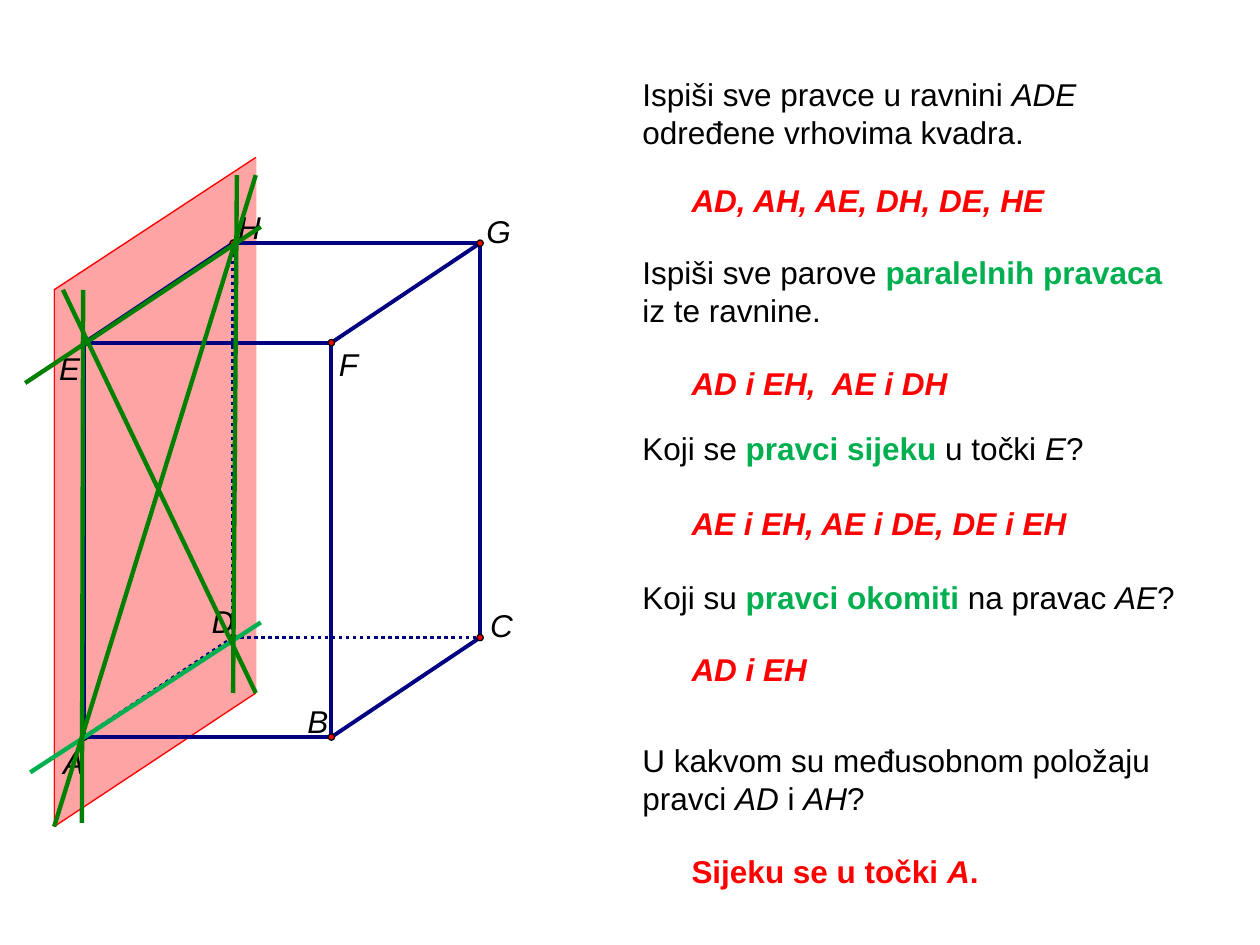
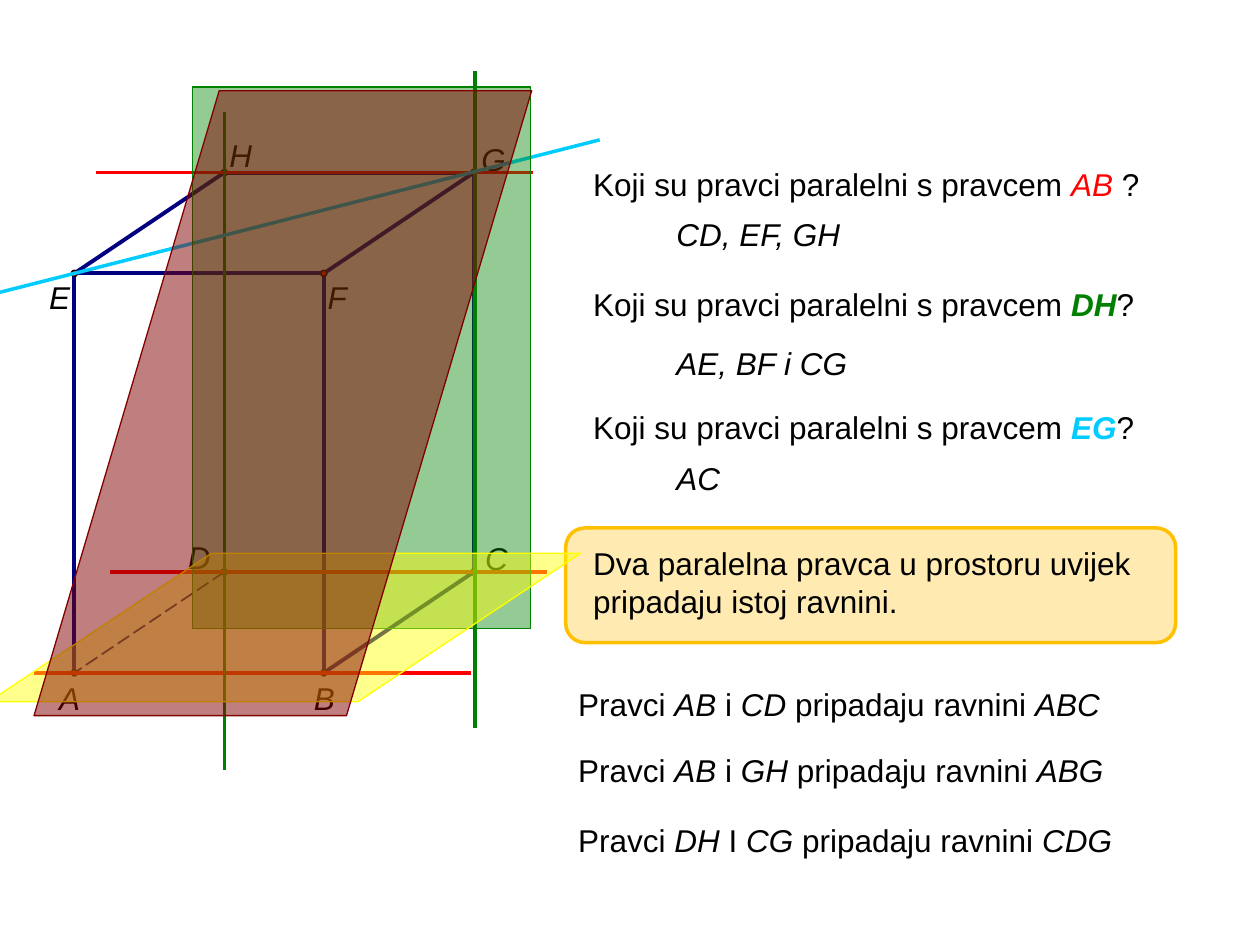
"""Builds two slides on lines and planes determined by the vertices of a cuboid."""
from dataclasses import dataclass

from lxml import etree
from pptx import Presentation
from pptx.dml.color import RGBColor
from pptx.enum.dml import MSO_LINE
from pptx.enum.shapes import MSO_CONNECTOR, MSO_SHAPE
from pptx.enum.text import MSO_AUTO_SIZE
from pptx.oxml.ns import qn
from pptx.util import Inches, Pt

STRAIGHT = MSO_CONNECTOR.STRAIGHT
OVAL, RECT, ROUNDED = MSO_SHAPE.OVAL, MSO_SHAPE.RECTANGLE, MSO_SHAPE.ROUNDED_RECTANGLE
FIT = MSO_AUTO_SIZE.SHAPE_TO_FIT_TEXT
DOTS, DASHES = MSO_LINE.ROUND_DOT, MSO_LINE.LONG_DASH
BLANK = 6


@dataclass(frozen=True)
class Theme:
    font: str = "Arial"
    size: float = 18
    text: str = "000000"
    red: str = "FF0000"
    green: str = "008000"
    accent: str = "00B050"
    cyan: str = "00CCFF"
    edge: str = "000080"
    pink: str = "FFA4A4"
    amber: str = "FFC000"
    leaf: str = "008200"
    yellow: str = "FFFF00"
    maroon: str = "800000"
    edge_width: float = 2.25
    dot: float = 0.05


class Deck:
    def __init__(self, theme):
        self.theme = theme
        self.prs = Presentation()
        self.prs.slide_width, self.prs.slide_height = Inches(10), Inches(7.5)
        self.shapes = None

    def slide(self):
        self.shapes = self.prs.slides.add_slide(self.prs.slide_layouts[BLANK]).shapes

    def paint(self, sp, fill, line, width=0, alpha=None):
        sp.shadow.inherit = False
        sp.fill.solid()
        sp.fill.fore_color.rgb = RGBColor.from_string(fill)
        sp.line.color.rgb = RGBColor.from_string(line)
        sp.line.width = Pt(width)
        if alpha is not None:
            clr = sp._element.spPr.find(qn("a:solidFill"))[0]
            etree.SubElement(clr, qn("a:alpha")).set("val", str(alpha * 1000))

    def shape(self, kind, x, y, w, h, fill, line, width=0, alpha=None):
        sp = self.shapes.add_shape(kind, Inches(x), Inches(y), Inches(w), Inches(h))
        self.paint(sp, fill, line, width, alpha)

    def plane(self, points, color, alpha=None):
        pts = [(Inches(x), Inches(y)) for x, y in points]
        builder = self.shapes.build_freeform(*pts[0])
        builder.add_line_segments(pts[1:], close=True)
        self.paint(builder.convert_to_shape(), color, color, alpha=alpha)

    def line(self, start, end, color, width, dash=None):
        ends = [Inches(v) for v in (*start, *end)]
        cx = self.shapes.add_connector(STRAIGHT, *ends)
        cx.line.color.rgb = RGBColor.from_string(color)
        cx.line.width = Pt(width)
        if dash is not None:
            cx.line.dash_style = dash
        etree.SubElement(cx._element.spPr, qn("a:effectLst"))

    def text(self, x, y, w, h, *runs, label=False):
        tf = self.shapes.add_textbox(Inches(x), Inches(y), Inches(w), Inches(h)).text_frame
        tf.word_wrap = not label
        tf.auto_size = FIT
        if label:
            tf.margin_left = tf.margin_right = tf.margin_top = tf.margin_bottom = 0
        p = tf.paragraphs[0]
        for content, style, color in runs:
            r = p.add_run()
            r.text = content
            r.font.name, r.font.size = self.theme.font, Pt(self.theme.size)
            r.font.bold, r.font.italic = "b" in style, "i" in style
            r.font.color.rgb = RGBColor.from_string(color)

    def cuboid(self, x, y, w, h, dx, dy, labels, dash, hidden_width):
        t = self.theme
        front = {"A": (x, y + h), "B": (x + w, y + h), "F": (x + w, y), "E": (x, y)}
        back = {k: (px + dx, py - dy) for k, (px, py) in zip("DCGH", front.values())}
        corners = {**front, **back}
        for a, b in ("AB", "EF", "FB", "CB", "GF", "GC", "HG", "EA", "HE"):
            self.line(corners[a], corners[b], t.edge, t.edge_width)
        for k in "CAH":
            self.line(corners["D"], corners[k], t.edge, hidden_width, dash)
        for k, (px, py) in corners.items():
            self.shape(OVAL, px - t.dot / 2, py - t.dot / 2, t.dot, t.dot, t.red, t.text)
            self.text(*labels[k], 0.18, 0.3, self.italic(k), label=True)

    def plain(self, content):
        return content, "", self.theme.text

    def italic(self, content):
        return content, "i", self.theme.text

    def mixed(self, *parts):
        return [(self.italic if i % 2 else self.plain)(s) for i, s in enumerate(parts)]


def plane_ade(deck):
    t = deck.theme
    deck.slide()
    plane = [(0.43, 6.56), (2.03, 5.5), (2.03, 1.25), (0.43, 2.3)]
    deck.plane(plane, t.pink)
    for start, end in zip(plane, plane[1:2] + plane[3:] + plane[3:]):
        pass
    for a, b in ((3, 0), (2, 3), (1, 0)):
        deck.line(plane[a], plane[b], t.red, 0.75)
    labels = {"A": (0.5, 5.9), "B": (2.44, 5.57), "C": (3.89, 4.81), "D": (1.68, 4.78),
              "E": (0.47, 2.77), "F": (2.69, 2.74), "G": (3.86, 1.68), "H": (1.89, 1.65)}
    deck.cuboid(0.67, 2.72, 1.96, 3.13, 1.18, 0.79, labels, DOTS, 0)

    questions = [
        (0.55, 4.73, 0.7, deck.mixed("Ispiši sve pravce u ravnini ", "ADE ",
                                     "određene vrhovima kvadra.")),
        (1.96, 4.33, 0.7, [deck.plain("Ispiši sve parove "),
                           ("paralelnih pravaca ", "b", t.accent),
                           deck.plain("iz te ravnine.")]),
        (3.36, 4.73, 0.4, [deck.plain("Koji se "), ("pravci sijeku ", "b", t.accent),
                           *deck.mixed("u točki ", "E", "?")]),
        (4.54, 4.73, 0.4, [deck.plain("Koji su "), ("pravci okomiti ", "b", t.accent),
                           *deck.mixed("na pravac ", "AE", "?")]),
        (5.83, 4.33, 0.7, deck.mixed("U kakvom su međusobnom položaju pravci ", "AD",
                                     " i ", "AH", "?")),
    ]
    for y, w, h, runs in questions:
        deck.text(5, y, w, h, *runs)
    answers = [
        (1.39, [("AD, AH, AE, DH, DE, HE", "bi")]),
        (2.84, [("AD i EH,  AE i DH", "bi")]),
        (3.95, [("AE i EH, AE i DE, DE i EH", "bi")]),
        (5.11, [("AD i EH", "bi")]),
        (6.71, [("Sijeku se u točki ", "b"), ("A", "bi"), (".", "b")]),
    ]
    for y, runs in answers:
        deck.text(5.39, y, 3.94, 0.4, *[(s, style, t.red) for s, style in runs])

    deck.line((0.24, 6.13), (2.07, 4.94), t.accent, 2.5)
    for start, end in (((0.43, 6.56), (2.03, 1.39)), ((0.65, 6.53), (0.66, 2.3)),
                       ((1.85, 5.5), (1.88, 1.39)), ((2.03, 5.5), (0.5, 2.3)),
                       ((2.07, 1.8), (0.2, 3.04))):
        deck.line(start, end, t.green, 2.5)


def parallel_lines(deck):
    t = deck.theme
    deck.slide()
    deck.shape(ROUNDED, 4.49, 4.19, 4.84, 0.91, t.amber, t.amber, 2, 30)
    labels = {"A": (0.47, 5.39), "B": (2.49, 5.39), "C": (3.85, 4.28), "D": (1.49, 4.27),
              "E": (0.39, 2.21), "F": (2.6, 2.21), "G": (3.82, 1.11), "H": (1.82, 1.08)}
    deck.cuboid(0.59, 2.17, 1.98, 3.17, 1.19, 0.8, labels, DASHES, 1)

    for y, name, style, color, end in ((1.26, "AB", "i", t.red, " ?"),
                                       (2.21, "DH", "bi", t.green, "?"),
                                       (3.19, "EG", "bi", t.cyan, "?")):
        deck.text(4.61, y, 4.73, 0.4, deck.plain("Koji su pravci paralelni s pravcem "),
                  (name, style, color), deck.plain(end))
    for y, answer in ((1.66, "CD, EF, GH"), (2.68, "AE, BF i CG"), (3.59, "AC")):
        deck.text(5.27, y, 1.97, 0.4, deck.italic(answer))
    deck.text(4.61, 4.27, 4.57, 0.71, deck.plain(
        "Dva paralelna pravca u prostoru uvijek pripadaju istoj ravnini."))
    for y, first, joint, second, plane in ((5.39, "AB", " i ", "CD", "ABC"),
                                           (5.91, "AB", " i ", "GH", "ABG"),
                                           (6.47, "DH", " I ", "CG", "CDG")):
        deck.text(4.49, y, 5.11, 0.4, *deck.mixed(
            "Pravci ", first, joint, second, " pripadaju ravnini ", plane))

    for x, y in ((0.27, 5.34), (0.87, 4.54), (0.76, 1.37)):
        deck.line((x, y), (x + 3.47, y), t.red, 2)
    for x, y in ((1.78, 0.89), (3.77, 0.56)):
        deck.line((x, y), (x, y + 5.22), t.green, 2)
    deck.line((0, 2.32), (4.76, 1.11), t.cyan, 2)

    deck.shape(RECT, 1.53, 0.69, 2.68, 4.3, t.leaf, t.leaf, alpha=42)
    deck.plane([(-0.09, 5.57), (2.84, 5.57), (4.61, 4.39), (1.68, 4.39)], t.yellow, 45)
    deck.plane([(0.27, 5.68), (2.75, 5.68), (4.22, 0.72), (1.74, 0.72)], t.maroon, 50)


def main():
    deck = Deck(Theme())
    plane_ade(deck)
    parallel_lines(deck)
    deck.prs.save("out.pptx")


if __name__ == "__main__":
    main()
